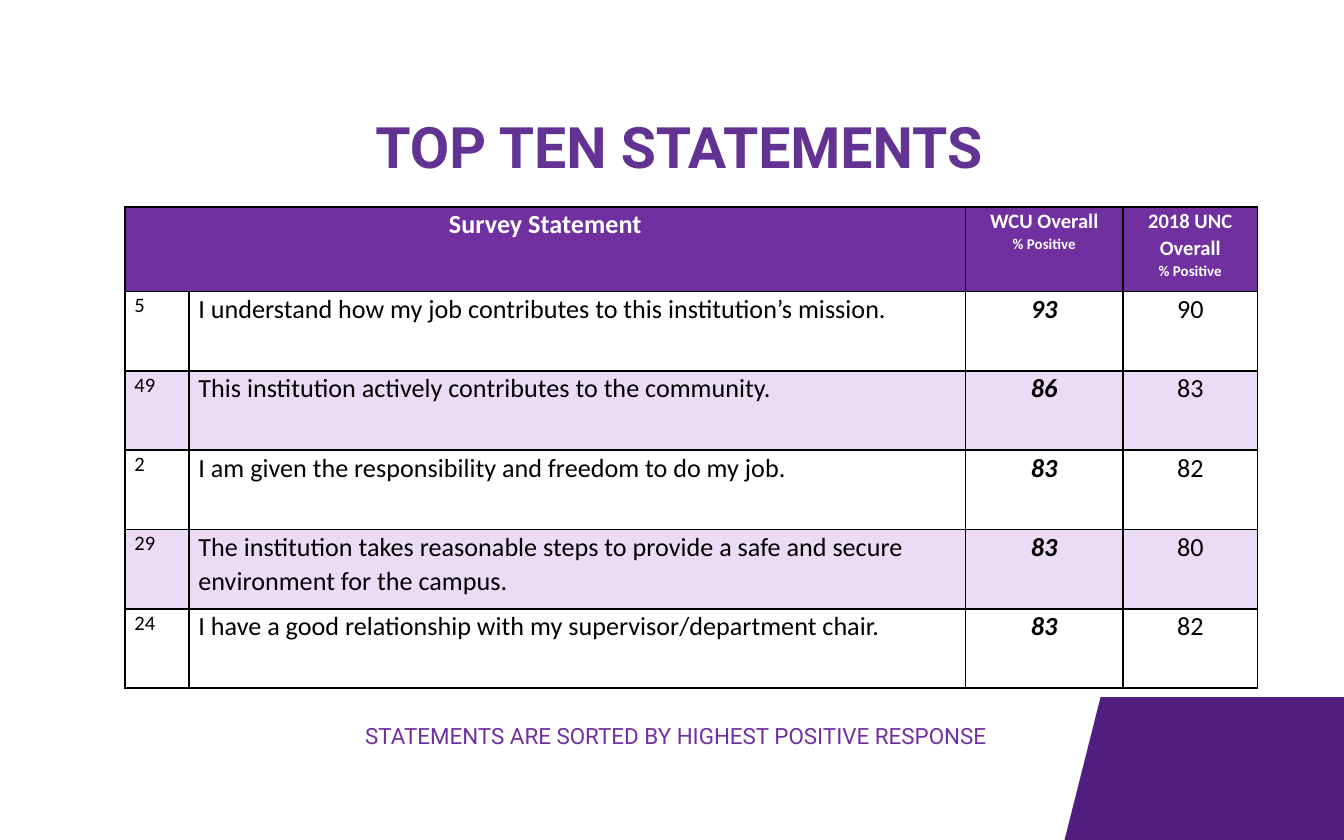
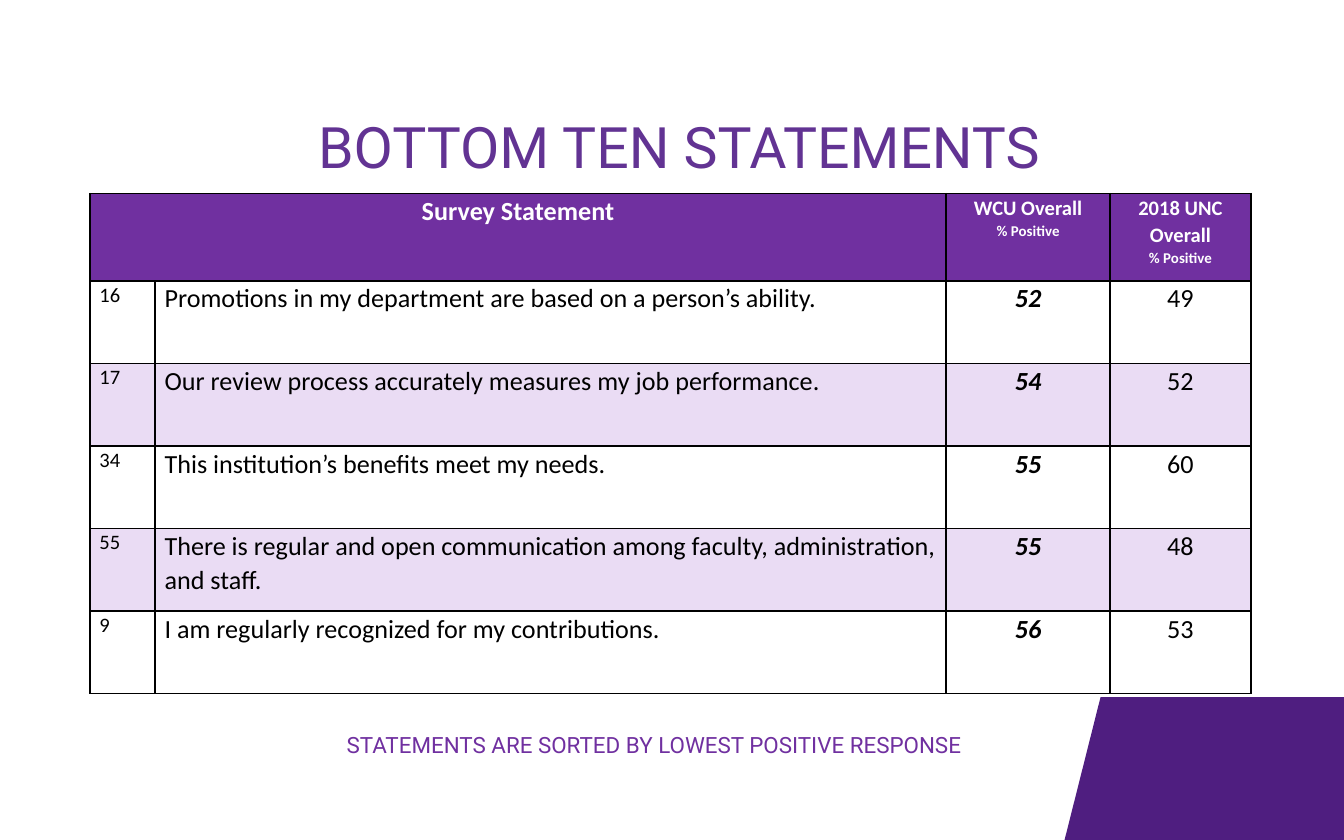
from dataclasses import dataclass

from lxml.etree import SubElement as Sub
from pptx import Presentation
from pptx.dml.color import RGBColor as Rgb
from pptx.enum.text import MSO_ANCHOR as Anchor
from pptx.enum.text import MSO_AUTO_SIZE as Fit
from pptx.enum.text import PP_ALIGN as Align
from pptx.oxml.ns import qn
from pptx.util import Cm, Pt


@dataclass(frozen=True)
class Theme:
    title: str = "623393"
    head: str = "7030A0"
    band: str = "4F1E80"
    tint: str = "EADCF4"
    white: str = "FFFFFF"
    black: str = "000000"
    face: str = "Roboto"
    cell: str = "Calibri"
    big: float = 30.6
    text: float = 14
    note: float = 12
    small: float = 11
    tiny: float = 8
    rule: float = 1


THEME = Theme()
WIDE, HIGH = 25.4, 15.88

HEADS = [["Survey Statement"], ["WCU Overall", "% Positive"], ["2018 UNC Overall", "% Positive"]]

TOP = [
    ("5", "I understand how my job contributes to this institution’s mission.", "93", "90"),
    ("49", "This institution actively contributes to the community.", "86", "83"),
    ("2", "I am given the responsibility and freedom to do my job.", "83", "82"),
    ("29", "The institution takes reasonable steps to provide a safe and secure "
           "environment for the campus.", "83", "80"),
    ("24", "I have a good relationship with my supervisor/department chair.", "83", "82"),
]

LOW = [
    ("16", "Promotions in my department are based on a person’s ability.", "52", "49"),
    ("17", "Our review process accurately measures my job performance.", "54", "52"),
    ("34", "This institution’s benefits meet my needs.", "55", "60"),
    ("55", "There is regular and open communication among faculty, "
           "administration, and staff.", "55", "48"),
    ("9", "I am regularly recognized for my contributions.", "56", "53"),
]


def style(para, size, color, face, bold=False, slant=False, align=Align.LEFT, space=1.07):
    para.alignment = align
    para.line_spacing = space
    font = para.font
    font.name, font.size = face, Pt(size)
    font.bold, font.italic = bold, slant
    font.color.rgb = Rgb.from_string(color)


def add_band(slide):
    top = Cm(13.18)
    pen = slide.shapes.build_freeform(Cm(20.8), top)
    pen.add_line_segments([(Cm(WIDE), top), (Cm(WIDE), Cm(HIGH)), (Cm(20.12), Cm(HIGH))])
    band = pen.convert_to_shape()
    band.shadow.inherit = False
    band.fill.solid()
    band.fill.fore_color.rgb = Rgb.from_string(THEME.band)
    band.line.fill.background()


def add_title(slide, text, bold):
    box = slide.shapes.title
    box.left, box.top, box.width, box.height = Cm(1.02), Cm(1.42), Cm(23.62), Cm(2.92)
    frame = box.text_frame
    frame.text = text
    frame.auto_size = Fit.NONE
    frame.vertical_anchor = Anchor.MIDDLE
    style(frame.paragraphs[0], THEME.big, THEME.title, THEME.face, bold,
          align=Align.CENTER, space=Pt(30))


def add_note(slide, text, place):
    frame = slide.shapes.add_textbox(*map(Cm, place)).text_frame
    frame.word_wrap = True
    frame.auto_size = Fit.SHAPE_TO_FIT_TEXT
    frame.text = text
    style(frame.paragraphs[0], THEME.note, THEME.head, THEME.face, space=Pt(34))


def dress(cell, color):
    cell.margin_left = cell.margin_right = Cm(0.18)
    cell.margin_top = cell.margin_bottom = 0
    props = cell._tc.get_or_add_tcPr()
    for side in ("a:lnL", "a:lnR", "a:lnT", "a:lnB"):
        line = Sub(props, qn(side), w=str(Pt(THEME.rule)))
        Sub(Sub(line, qn("a:solidFill")), qn("a:srgbClr"), val=THEME.black)
    if color:
        cell.fill.solid()
        cell.fill.fore_color.rgb = Rgb.from_string(color)
    else:
        cell.fill.background()


def fill_head(row):
    for cell, lines in zip((row[0], row[2], row[3]), HEADS):
        cell.text = "\n".join(lines)
        sizes = (THEME.small, THEME.tiny) if len(lines) > 1 else (THEME.text,)
        for para, size in zip(cell.text_frame.paragraphs, sizes):
            style(para, size, THEME.white, THEME.cell, True, align=Align.CENTER)


def fill_row(row, items):
    for col, (cell, text) in enumerate(zip(row, items)):
        cell.text = text
        score = col == 2
        style(cell.text_frame.paragraphs[0], THEME.text if col else THEME.small,
              THEME.black, THEME.cell, score, score,
              Align.CENTER if col > 1 else Align.LEFT)


def add_grid(slide, data, left, top, cols, head, step):
    high = head + step * len(data)
    grid = slide.shapes.add_table(len(data) + 1, len(cols), Cm(left), Cm(top),
                                  Cm(sum(cols)), Cm(high)).table
    grid.horz_banding = False
    for col, width in zip(grid.columns, cols):
        col.width = Cm(width)
    for num, row in enumerate(grid.rows):
        row.height = Cm(step if num else head)
        color = (None if num % 2 else THEME.tint) if num else THEME.head
        for cell in row.cells:
            dress(cell, color)
    grid.cell(0, 0).merge(grid.cell(0, 1))
    fill_head(list(grid.rows[0].cells))
    for num, items in enumerate(data, 1):
        fill_row(grid.rows[num].cells, items)


def add_page(deck, title, bold, data, place, note, spot):
    slide = deck.slides.add_slide(deck.slide_layouts[5])
    add_band(slide)
    add_title(slide, title, bold)
    add_grid(slide, data, *place)
    add_note(slide, note, spot)


def main():
    deck = Presentation()
    deck.slide_width, deck.slide_height = Cm(WIDE), Cm(HIGH)
    add_page(deck, "TOP TEN STATEMENTS", True, TOP,
             (2.36, 3.91, (1.21, 14.68, 2.97, 2.55), 1.6, 1.5),
             "STATEMENTS ARE SORTED BY HIGHEST POSITIVE RESPONSE",
             (6.65, 12.83, 13.31, 1.27))
    add_page(deck, "BOTTOM TEN STATEMENTS", False, LOW,
             (1.7, 3.66, (1.23, 14.95, 3.1, 2.66), 1.65, 1.56),
             "STATEMENTS ARE SORTED BY LOWEST POSITIVE RESPONSE",
             (6.3, 13, 12.7, 1.47))
    deck.save("out.pptx")


if __name__ == "__main__":
    main()
